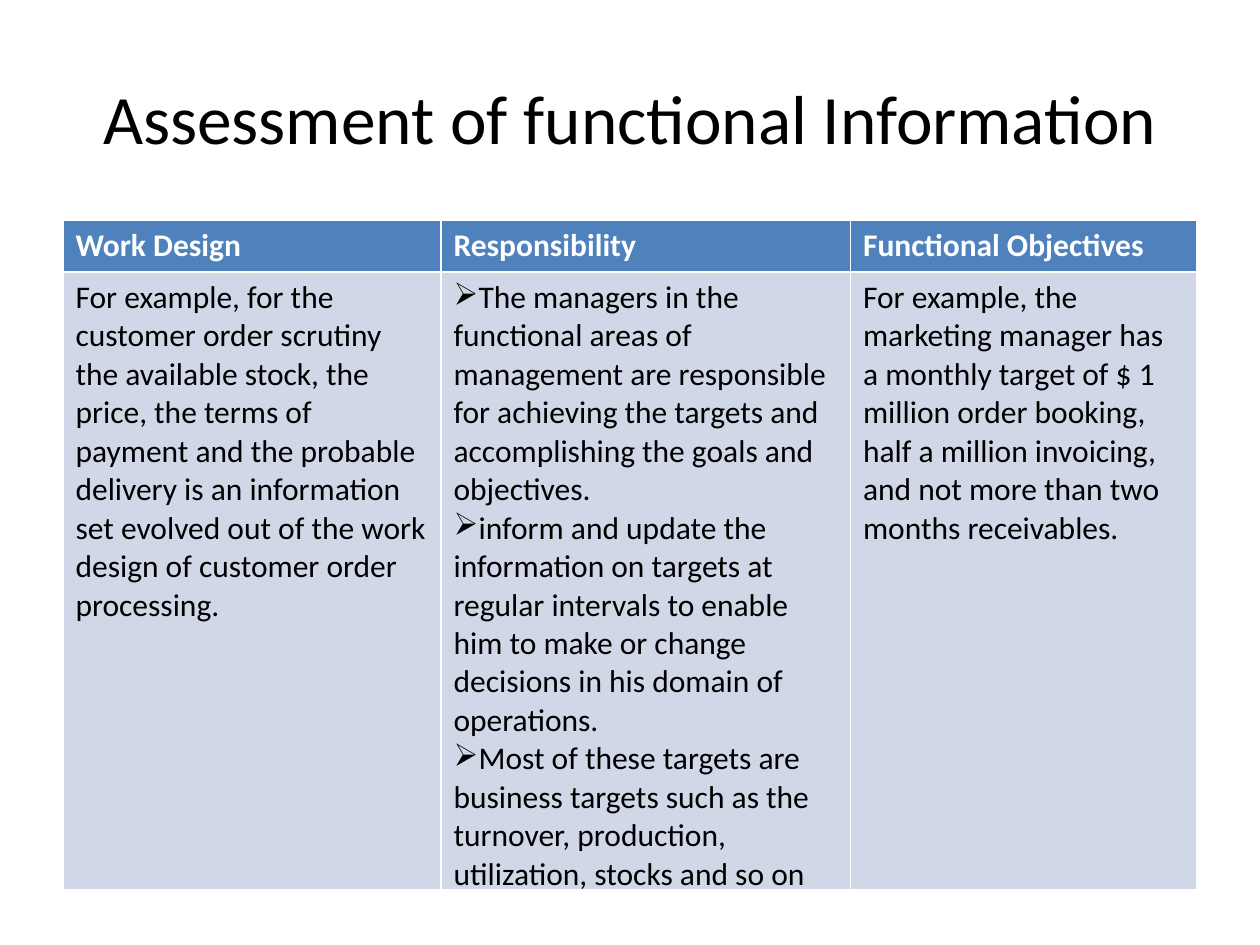
from lxml.etree import SubElement
from pptx import Presentation
from pptx.dml.color import RGBColor
from pptx.enum.text import MSO_ANCHOR, PP_ALIGN
from pptx.oxml.ns import qn
from pptx.util import Inches, Pt

BLACK = RGBColor(0x00, 0x00, 0x00)
WHITE = RGBColor(0xFF, 0xFF, 0xFF)
BLUE = RGBColor(0x4F, 0x81, 0xBD)
PALE = RGBColor(0xD0, 0xD8, 0xE8)
FACE = "Calibri"

TITLE = "Assessment of functional Information"
WIDTHS = [3, 3.25, 2.75]
HEIGHTS = [0.41, 4.9]
HEADS = ["Work Design", "Responsibility", "Functional Objectives"]
BODIES = [
    ["For example, for the customer order scrutiny the available stock, "
     "the price, the terms of payment and the probable delivery is an "
     "information set evolved out of the work design of customer order "
     "processing."],
    ["The managers in the functional areas of management are responsible "
     "for achieving the targets and accomplishing the goals and objectives.",
     "inform and update the information on targets at regular intervals to "
     "enable him to make or change decisions in his domain of operations.",
     "Most of these targets are business targets such as the turnover, "
     "production, utilization, stocks and so on"],
    ["For example, the marketing manager has a monthly target of $ 1 million "
     "order booking, half a million invoicing, and not more than two months "
     "receivables."],
]


def set_font(para, size, color, bold=False):
    font = para.font
    font.name, font.size, font.bold = FACE, Pt(size), bold
    font.color.rgb = color


def add_bullet(para):
    props = para._p.get_or_add_pPr()
    props.set("marL", "0")
    props.set("indent", "0")
    SubElement(props, qn("a:buChar")).set("char", "➢")


def add_title(slide):
    box = slide.shapes.add_textbox(Inches(0.5), Inches(0.3),
                                   Inches(9), Inches(1.25))
    frame = box.text_frame
    frame.word_wrap = True
    frame.vertical_anchor = MSO_ANCHOR.MIDDLE
    frame.text = TITLE
    para = frame.paragraphs[0]
    para.alignment = PP_ALIGN.CENTER
    set_font(para, 39.6, BLACK)


def fill_cell(cell, lines, fill, color, bold=False):
    """Write the lines as paragraphs, with bullets if there are several."""
    cell.fill.solid()
    cell.fill.fore_color.rgb = fill
    cell.text = "\n".join(lines)
    for para in cell.text_frame.paragraphs:
        set_font(para, 18, color, bold)
        if len(lines) > 1:
            add_bullet(para)


def add_grid(slide):
    table = slide.shapes.add_table(
        len(HEIGHTS), len(WIDTHS), Inches(0.5), Inches(1.75),
        Inches(sum(WIDTHS)), Inches(sum(HEIGHTS))).table
    for row, height in zip(table.rows, HEIGHTS):
        row.height = Inches(height)
    for col, width in enumerate(WIDTHS):
        table.columns[col].width = Inches(width)
        fill_cell(table.cell(0, col), [HEADS[col]], BLUE, WHITE, True)
        fill_cell(table.cell(1, col), BODIES[col], PALE, BLACK)


def main():
    deck = Presentation()
    deck.slide_width, deck.slide_height = Inches(10), Inches(7.5)
    slide = deck.slides.add_slide(deck.slide_layouts[6])
    add_title(slide)
    add_grid(slide)
    deck.save("out.pptx")


if __name__ == "__main__":
    main()
